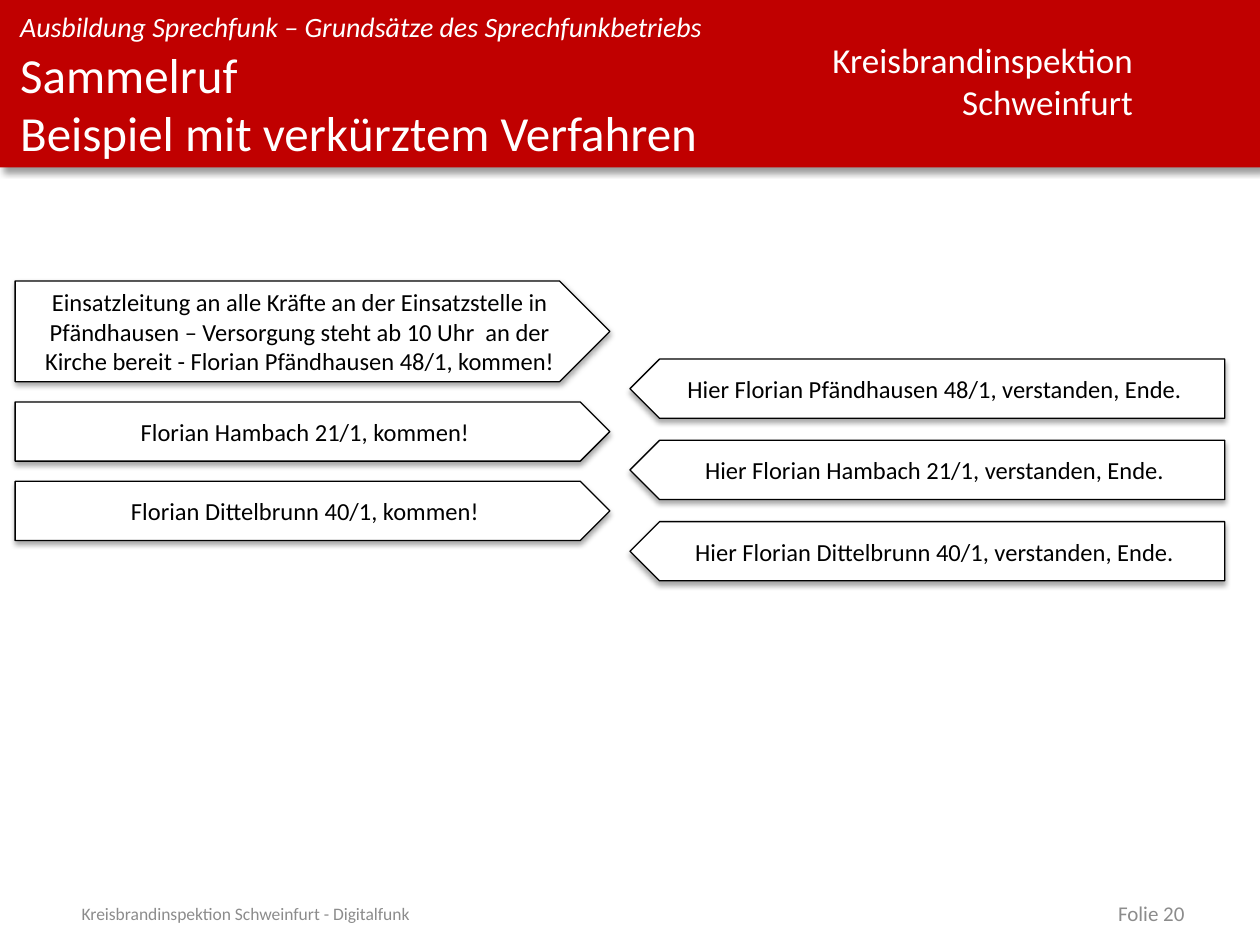
import lxml.etree
import pptx
import pptx.dml.color
import pptx.enum.shapes
import pptx.enum.text
import pptx.oxml.ns
import pptx.util

Inches = pptx.util.Inches
Align = pptx.enum.text.PP_ALIGN
Anchor = pptx.enum.text.MSO_ANCHOR
Shape = pptx.enum.shapes.MSO_SHAPE
qn = pptx.oxml.ns.qn


class Theme:
    font = "Calibri"
    red = pptx.dml.color.RGBColor.from_string("C00000")
    white = pptx.dml.color.RGBColor.from_string("FFFFFF")
    black = pptx.dml.color.RGBColor.from_string("000000")
    gray = pptx.dml.color.RGBColor.from_string("8C8C8C")
    title, unit, course, call, page, footer = map(pptx.util.Pt, (28, 20, 16, 14, 12, 10))


def write(sp, text, size, color, align=Align.LEFT, anchor=Anchor.TOP, wrap=True):
    tf = sp.text_frame
    tf.text = text
    tf.word_wrap = wrap
    tf.vertical_anchor = anchor
    for p in tf.paragraphs:
        p.alignment = align
        for r in p.runs:
            r.font.name = Theme.font
            r.font.size = size
            r.font.color.rgb = color
    return tf


def add_shadow(sp, alpha, blur, dist, angle):
    sp.shadow.inherit = False
    effects = sp._element.spPr.find(qn("a:effectLst"))
    outer = lxml.etree.SubElement(
        effects, qn("a:outerShdw"), blurRad=str(pptx.util.Pt(blur)),
        dist=str(pptx.util.Pt(dist)), dir=str(angle * 60000), algn="ctr", rotWithShape="0")
    color = lxml.etree.SubElement(outer, qn("a:srgbClr"), val=str(Theme.black))
    lxml.etree.SubElement(color, qn("a:alpha"), val=str(alpha * 1000))


prs = pptx.Presentation()
prs.slide_width = Inches(10)
prs.slide_height = Inches(7.5)
s = prs.slides.add_slide(prs.slide_layouts[6])

banner = s.shapes.add_shape(Shape.RECTANGLE, 0, 0, prs.slide_width, Inches(1.33))
banner.fill.solid()
banner.fill.fore_color.rgb = Theme.red
banner.line.fill.background()
add_shadow(banner, 40, 4, 3, 45)

unit = s.shapes.add_textbox(Inches(6.48), Inches(0.26), Inches(2.61), Inches(0.77))
write(unit, "Kreisbrandinspektion\nSchweinfurt", Theme.unit, Theme.white, Align.RIGHT, wrap=False)

headings = [
    (0.08, 0.27, "Ausbildung Sprechfunk – Grundsätze des Sprechfunkbetriebs", Theme.course, True),
    (0.35, 0.99, "Sammelruf\vBeispiel mit verkürztem Verfahren", Theme.title, False),
]
for top, height, text, size, italic in headings:
    sp = s.shapes.add_textbox(Inches(0.16), Inches(top), Inches(6.32), Inches(height))
    tf = write(sp, text, size, Theme.white)
    tf.margin_left = tf.margin_right = tf.margin_top = tf.margin_bottom = 0
    for r in tf.paragraphs[0].runs:
        r.font.italic = italic

footers = [
    (0.55, 6.04, "Kreisbrandinspektion Schweinfurt - Digitalfunk", Theme.footer, Align.LEFT),
    (7.17, 2.33, "Folie 20", Theme.page, Align.RIGHT),
]
for left, width, text, size, align in footers:
    sp = s.shapes.add_textbox(Inches(left), Inches(7.15), Inches(width), Inches(0.2))
    write(sp, text, size, Theme.gray, align, Anchor.MIDDLE)

calls = [
    (2.23, 0.8, "Einsatzleitung an alle Kräfte an der Einsatzstelle in Pfändhausen – "
     "Versorgung steht ab 10 Uhr  an der Kirche bereit - Florian Pfändhausen 48/1, kommen!"),
    (3.19, 0.47, "Florian Hambach 21/1, kommen!"),
    (3.82, 0.47, "Florian Dittelbrunn 40/1, kommen!"),
]
stations = ["Pfändhausen 48/1", "Hambach 21/1", "Dittelbrunn 40/1"]
replies = [
    (2.85 + 0.645 * i, 0.47, f"Hier Florian {station}, verstanden, Ende.")
    for i, station in enumerate(stations)
]
for left, flipped, messages in [(0.12, False, calls), (5, True, replies)]:
    for top, height, text in messages:
        sp = s.shapes.add_shape(
            Shape.PENTAGON, Inches(left), Inches(top), Inches(4.72), Inches(height))
        if flipped:
            sp._element.spPr.find(qn("a:xfrm")).set("flipH", "1")
        sp.fill.solid()
        sp.fill.fore_color.rgb = Theme.white
        sp.line.color.rgb = Theme.black
        sp.line.width = pptx.util.Pt(0.75)
        add_shadow(sp, 35, 3.1, 1.8, 90)
        write(sp, text, Theme.call, Theme.black, Align.CENTER, Anchor.MIDDLE)

prs.save("out.pptx")
